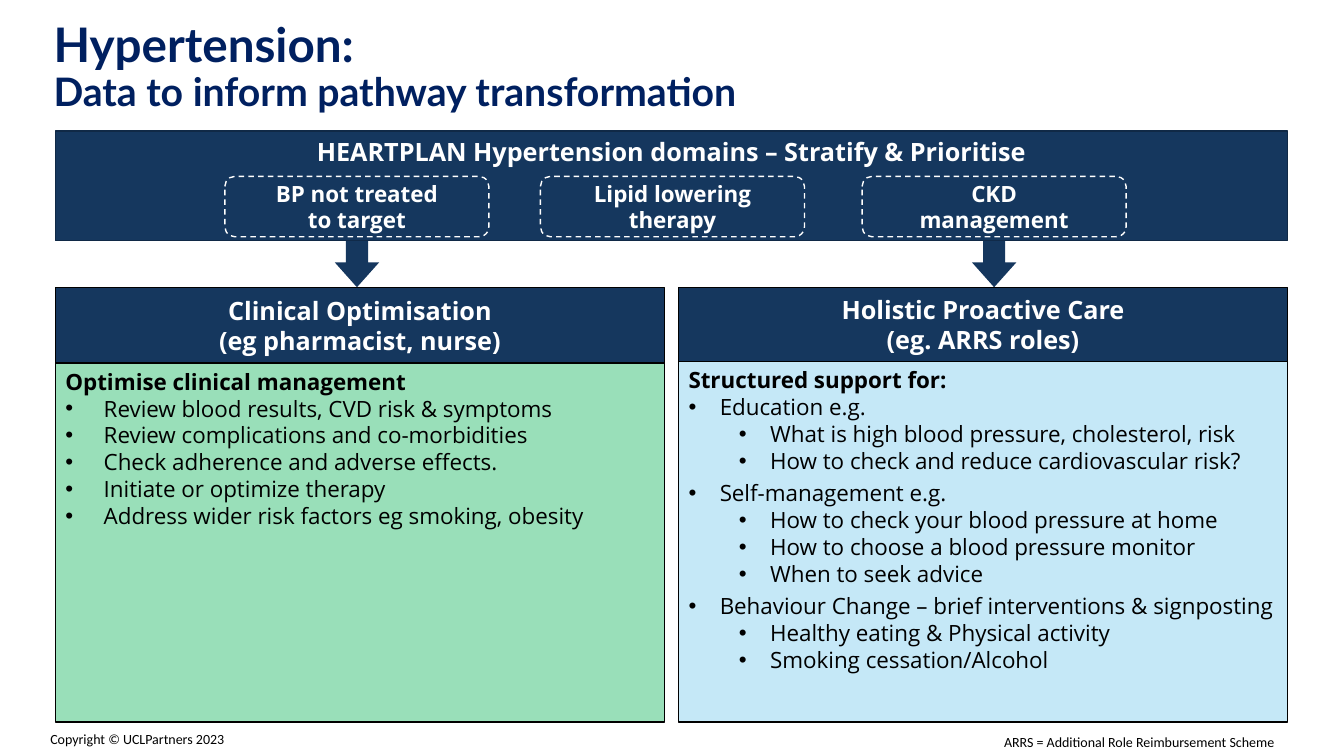
from dataclasses import dataclass

from lxml.etree import SubElement
from pptx import Presentation
from pptx.dml.color import RGBColor
from pptx.enum.dml import MSO_LINE
from pptx.enum.shapes import MSO_SHAPE
from pptx.enum.text import MSO_ANCHOR, MSO_AUTO_SIZE, PP_ALIGN
from pptx.oxml.ns import qn
from pptx.util import Inches, Pt

COLOURS = {
    "title": "002060", "navy": "15375E", "banner_edge": "102946",
    "green": "00B050", "blue": "42B6E6", "black": "000000", "white": "FFFFFF",
}
SLIDE_WIDTH, SLIDE_HEIGHT = Inches(13.33), Inches(7.5)

# Layout, in percent of the slide's width and height
MARGIN, CONTENT_WIDTH, PANEL_WIDTH = 4.13, 91.67, 45.31
PANEL_TOP, PANEL_BOTTOM = 38, 95.5
DOMAIN_TOP, DOMAIN_WIDTH, DOMAIN_HEIGHT = 23.33, 19.65, 8
ARROW_TOP, ARROW_WIDTH, ARROW_HEIGHT = 31.87, 3.3, 6.13


@dataclass
class Area:
    """A place on the slide, in percent of its width and height."""
    left: float
    top: float
    width: float
    height: float

    def lengths(self) -> tuple[int, int, int, int]:
        return (int(SLIDE_WIDTH * self.left / 100), int(SLIDE_HEIGHT * self.top / 100),
                int(SLIDE_WIDTH * self.width / 100), int(SLIDE_HEIGHT * self.height / 100))


@dataclass
class Style:
    size: float
    colour: str
    bold: bool = False
    font: str = "Open Sans"
    align: PP_ALIGN = PP_ALIGN.LEFT


@dataclass
class Bullet:
    text: str
    level: int = 0
    space_before: float = 0


@dataclass
class Panel:
    left: float
    header_height: float
    heading: list[str]
    fill: str
    opacity: int
    intro: str
    indent: float
    bullets: list[Bullet]


@dataclass
class Domain:
    left: float
    lines: list[str]


@dataclass
class Note:
    area: Area
    text: str
    wrap: bool


HEADING = Style(18, "white", True, align=PP_ALIGN.CENTER)
DOMAIN = Style(16, "white", True, align=PP_ALIGN.CENTER)
INTRO = Style(16, "black", True)
BODY = Style(16, "black")
NOTE = Style(10, "black", font="Calibri")

DOMAINS = [
    Domain(16.73, ["BP not treated", "to target"]),
    Domain(40.21, ["Lipid lowering therapy"]),
    Domain(64.14, ["CKD", "management"]),
]
ARROW_CENTRES = [26.56, 73.97]
PANELS = [
    Panel(MARGIN, 10, ["Clinical Optimisation", "(eg pharmacist, nurse)"],
          "green", 40, "Optimise clinical management", 0.38, [
              Bullet("Review blood results, CVD risk & symptoms"),
              Bullet("Review complications and co-morbidities"),
              Bullet("Check adherence and adverse effects."),
              Bullet("Initiate or optimize therapy"),
              Bullet("Address wider risk factors eg smoking, obesity"),
          ]),
    Panel(MARGIN + CONTENT_WIDTH - PANEL_WIDTH, 9.8,
          ["Holistic Proactive Care", "(eg. ARRS roles)"],
          "blue", 30, "Structured support for:", 0.31, [
              Bullet("Education e.g."),
              Bullet("What is high blood pressure, cholesterol, risk", 1),
              Bullet("How to check and reduce cardiovascular risk?", 1),
              Bullet("Self-management e.g.", 0, 4),
              Bullet("How to check your blood pressure at home", 1),
              Bullet("How to choose a blood pressure monitor", 1),
              Bullet("When to seek advice", 1),
              Bullet("Behaviour Change – brief interventions & signposting", 0, 4),
              Bullet("Healthy eating & Physical activity", 1),
              Bullet("Smoking cessation/Alcohol", 1),
          ]),
]
NOTES = [
    Note(Area(3, 96, 14.7, 3.6), "Copyright © UCLPartners 2023", False),
    Note(Area(73.97, 96.4, 22.5, 3.6), "ARRS = Additional Role Reimbursement Scheme", True),
]


def colour(name: str) -> RGBColor:
    return RGBColor.from_string(COLOURS[name])


def add_shape(slide, kind: MSO_SHAPE, area: Area, fill: str | None = None,
              line: str | None = None, opacity: int = 100):
    shape = slide.shapes.add_shape(kind, *area.lengths())
    shape.shadow.inherit = False
    if fill:
        shape.fill.solid()
        shape.fill.fore_color.rgb = colour(fill)
        if opacity < 100:
            tint = shape.fill._xPr.find(".//" + qn("a:srgbClr"))
            SubElement(tint, qn("a:alpha"), val=str(opacity * 1000))
    else:
        shape.fill.background()
    if line:
        shape.line.color.rgb = colour(line)
        shape.line.width = Pt(1)
    else:
        shape.line.fill.background()
    return shape


def add_paragraph(frame, text: str, style: Style):
    first = frame.paragraphs[0]
    paragraph = frame.add_paragraph() if first.runs else first
    paragraph.alignment = style.align
    run = paragraph.add_run()
    run.text = text
    run.font.name, run.font.size, run.font.bold = style.font, Pt(style.size), style.bold
    run.font.color.rgb = colour(style.colour)
    return paragraph


def write(shape, lines: list[str], style: Style, anchor: MSO_ANCHOR) -> None:
    frame = shape.text_frame
    frame.word_wrap = True
    frame.vertical_anchor = anchor
    for line in lines:
        add_paragraph(frame, line, style)


def add_bullet(frame, bullet: Bullet, indent: float) -> None:
    paragraph = add_paragraph(frame, bullet.text, BODY)
    paragraph.level = bullet.level
    if bullet.space_before:
        paragraph.space_before = Pt(bullet.space_before)
    properties = paragraph._p.get_or_add_pPr()
    properties.set("marL", str(Inches(indent + bullet.level * 0.5)))
    properties.set("indent", str(-Inches(indent)))
    SubElement(properties, qn("a:buFont"), typeface="Arial")
    SubElement(properties, qn("a:buChar"), char="•")


def add_title(slide) -> None:
    title = slide.shapes.title
    title.left, title.top, title.width, title.height = Area(3.23, 2.13, 62.87, 12.67).lengths()
    title.text_frame.auto_size = MSO_AUTO_SIZE.NONE
    title.text_frame.vertical_anchor = MSO_ANCHOR.TOP
    for text, size in (("Hypertension:", 34), ("Data to inform pathway transformation", 28)):
        paragraph = add_paragraph(title.text_frame, text, Style(size, "title", True, "Lato"))
        paragraph.line_spacing = 0.9


def add_panel(slide, panel: Panel) -> None:
    header = add_shape(slide, MSO_SHAPE.RECTANGLE,
                       Area(panel.left, PANEL_TOP, PANEL_WIDTH, panel.header_height),
                       "navy", "black")
    write(header, panel.heading, HEADING, MSO_ANCHOR.MIDDLE)
    body_top = PANEL_TOP + panel.header_height
    body = add_shape(slide, MSO_SHAPE.RECTANGLE,
                     Area(panel.left, body_top, PANEL_WIDTH, PANEL_BOTTOM - body_top),
                     panel.fill, "black", panel.opacity)
    write(body, [panel.intro], INTRO, MSO_ANCHOR.TOP)
    for bullet in panel.bullets:
        add_bullet(body.text_frame, bullet, panel.indent)


def main() -> None:
    presentation = Presentation()
    presentation.slide_width, presentation.slide_height = SLIDE_WIDTH, SLIDE_HEIGHT
    slide = presentation.slides.add_slide(presentation.slide_layouts.get_by_name("Title Only"))
    add_title(slide)

    # Care panels and notes below them
    for panel in PANELS:
        add_panel(slide, panel)
    for note in NOTES:
        box = slide.shapes.add_textbox(*note.area.lengths())
        box.text_frame.word_wrap = note.wrap
        add_paragraph(box.text_frame, note.text, NOTE)

    # Banner with its domains
    banner = add_shape(slide, MSO_SHAPE.RECTANGLE, Area(MARGIN, 17.33, CONTENT_WIDTH, 14.53),
                       "navy", "banner_edge")
    write(banner, ["HEARTPLAN Hypertension domains – Stratify & Prioritise"],
          HEADING, MSO_ANCHOR.TOP)
    for domain in DOMAINS:
        box = add_shape(slide, MSO_SHAPE.ROUNDED_RECTANGLE,
                        Area(domain.left, DOMAIN_TOP, DOMAIN_WIDTH, DOMAIN_HEIGHT), line="white")
        box.line.dash_style = MSO_LINE.DASH
        write(box, domain.lines, DOMAIN, MSO_ANCHOR.MIDDLE)

    # Arrows from the banner to the panels
    for centre in ARROW_CENTRES:
        arrow = add_shape(slide, MSO_SHAPE.DOWN_ARROW,
                          Area(centre - ARROW_WIDTH / 2, ARROW_TOP, ARROW_WIDTH, ARROW_HEIGHT),
                          "navy")
        arrow.adjustments[1] = 0.56

    presentation.save("out.pptx")


if __name__ == "__main__":
    main()
